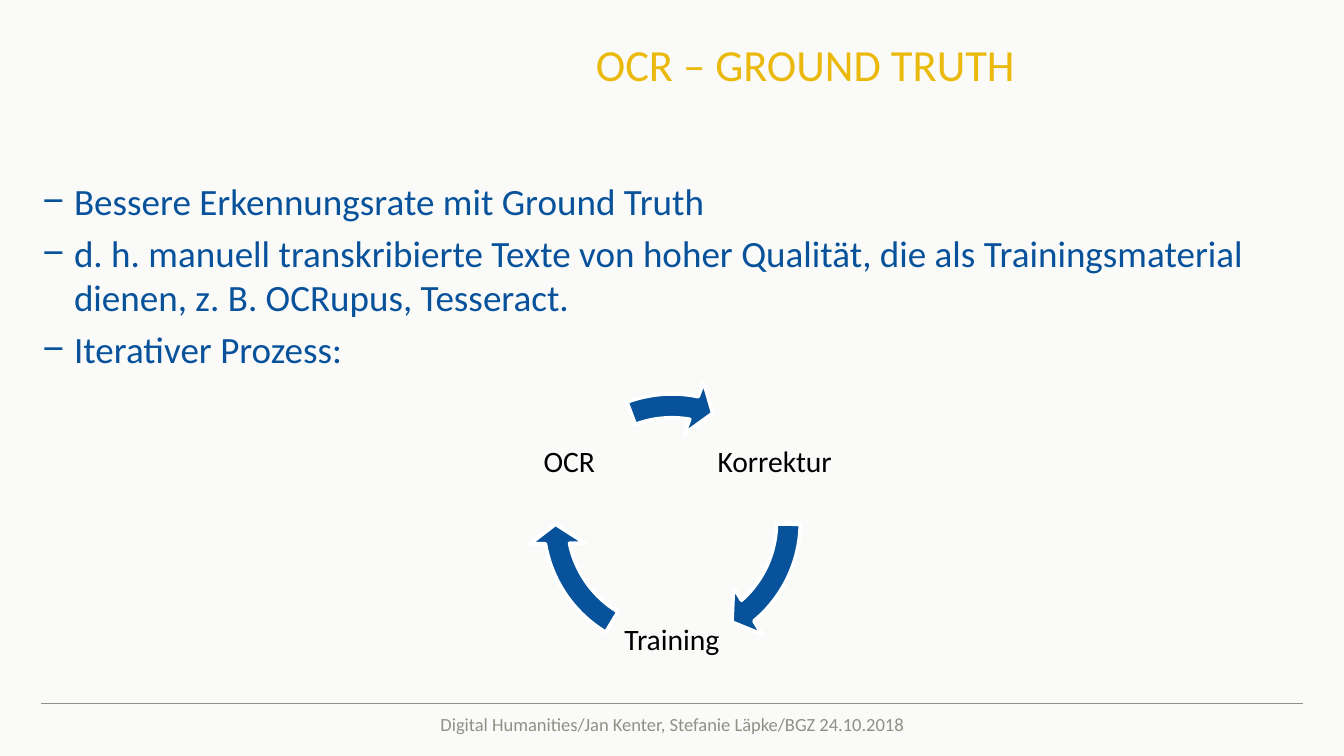
from math import cos, radians, sin

from pptx import Presentation
from pptx.dml.color import RGBColor
from pptx.enum.shapes import MSO_CONNECTOR, MSO_SHAPE
from pptx.enum.text import MSO_ANCHOR, MSO_AUTO_SIZE, PP_ALIGN
from pptx.oxml.ns import qn
from pptx.util import Cm, Pt

TITLE = "OCR – GROUND TRUTH"
BULLETS = [
    "Bessere Erkennungsrate mit Ground Truth",
    "d. h. manuell transkribierte Texte von hoher Qualität, die als "
    "Trainingsmaterial dienen, z. B. OCRupus, Tesseract.",
    "Iterativer Prozess:",
]
# Step, its angle on the circle, start and end angle of the arrow after it
CYCLE = [
    ("Korrektur", -30, 0.89, 49.36),
    ("Training", 90, 121.03, 169.5),
    ("OCR", 210, 249.48, 280.91),
]
FOOTER = "Digital Humanities/Jan Kenter, Stefanie Läpke/BGZ 24.10.2018"

COLORS = {"bg": "FAFAF9", "blue": "07529A", "gold": "EAB90C",
          "grey": "909085", "black": "000000", "white": "FFFFFF"}
FONT = "Calibri"
CENTER_X, CENTER_Y = 12.8, 9.95
RADIUS, LABEL, RING = 2.26, 2.34, 5.49


def rgb(name):
    return RGBColor.from_string(COLORS[name])


def place(sp, left, top, width, height):
    sp.left, sp.top, sp.width, sp.height = Cm(left), Cm(top), Cm(width), Cm(height)


def setup_frame(tf, anchor, margin=0, wrap=True):
    tf.auto_size = MSO_AUTO_SIZE.NONE
    tf.word_wrap = wrap
    tf.vertical_anchor = anchor
    tf.margin_left = tf.margin_right = tf.margin_top = tf.margin_bottom = Cm(margin)


def style(p, size, color, align=PP_ALIGN.LEFT):
    p.alignment = align
    for r in p.runs:
        r.font.name, r.font.size = FONT, Pt(size)
        r.font.color.rgb = rgb(color)


def add_label(s, text, box, size, color, margin=0, wrap=True):
    tf = s.shapes.add_textbox(*map(Cm, box)).text_frame
    setup_frame(tf, MSO_ANCHOR.MIDDLE, margin, wrap)
    tf.text = text
    style(tf.paragraphs[0], size, color, PP_ALIGN.CENTER)
    return tf.paragraphs[0]


prs = Presentation()
prs.slide_width, prs.slide_height = Cm(25.6), Cm(14.4)
s = prs.slides.add_slide(prs.slide_layouts[1])
s.background.fill.solid()
s.background.fill.fore_color.rgb = rgb("bg")

# Title
title = s.shapes.title
place(title, 11.15, 0.81, 13.67, 1.8)
setup_frame(title.text_frame, MSO_ANCHOR.TOP)
title.text_frame.text = TITLE
p = title.text_frame.paragraphs[0]
p.line_spacing = Pt(26)
p._p.get_or_add_pPr().set("marL", str(Cm(0.2)))
style(p, 24, "gold")

# Bullet list
body = s.placeholders[1]
place(body, 0.81, 3.4, 24, 9.2)
tf = body.text_frame
setup_frame(tf, MSO_ANCHOR.TOP)
for i, text in enumerate(BULLETS):
    p = tf.add_paragraph() if i else tf.paragraphs[0]
    p.text = text
    pPr = p._p.get_or_add_pPr()
    pPr.set("marL", str(Cm(0.6)))
    pPr.set("indent", str(-Cm(0.6)))
    bullet = pPr.makeelement(qn("a:buChar"), {"char": "−"})
    pPr.append(bullet)
    p.space_before, p.space_after = Pt(2 if i else 0), Pt(2)
    style(p, 20, "blue")

# Cycle of steps and arrows
for text, angle, start, end in CYCLE:
    x = CENTER_X + RADIUS * cos(radians(angle)) - LABEL / 2
    y = CENTER_Y + RADIUS * sin(radians(angle)) - LABEL / 2
    p = add_label(s, text, (x, y, LABEL, LABEL), 16, "black", 0.05)
    p.line_spacing = 0.9

    corner = CENTER_X - RING / 2, CENTER_Y - RING / 2
    arrow = s.shapes.add_shape(MSO_SHAPE.CIRCULAR_ARROW,
                               *map(Cm, (*corner, RING, RING)))
    # Angles are stored in 60000ths of a degree, adjustments in 100000ths
    for i, value in enumerate((0.083, 9.61 * 0.6, end * 0.6, start * 0.6, 0.096)):
        arrow.adjustments[i] = value
    arrow.shadow.inherit = False
    arrow.fill.solid()
    arrow.fill.fore_color.rgb = rgb("blue")
    arrow.line.color.rgb = rgb("white")
    arrow.line.width = Pt(2)

# Footer with rule
rule = s.shapes.add_connector(MSO_CONNECTOR.STRAIGHT,
                              Cm(0.79), Cm(13.4), Cm(24.81), Cm(13.4))
rule.line.color.rgb = rgb("grey")
rule.line.width = Pt(1)
spPr = rule._element.spPr
spPr.append(spPr.makeelement(qn("a:effectLst"), {}))
add_label(s, FOOTER, (5.8, 13.4, 14, 0.8), 10, "grey", wrap=False)

prs.save("out.pptx")
